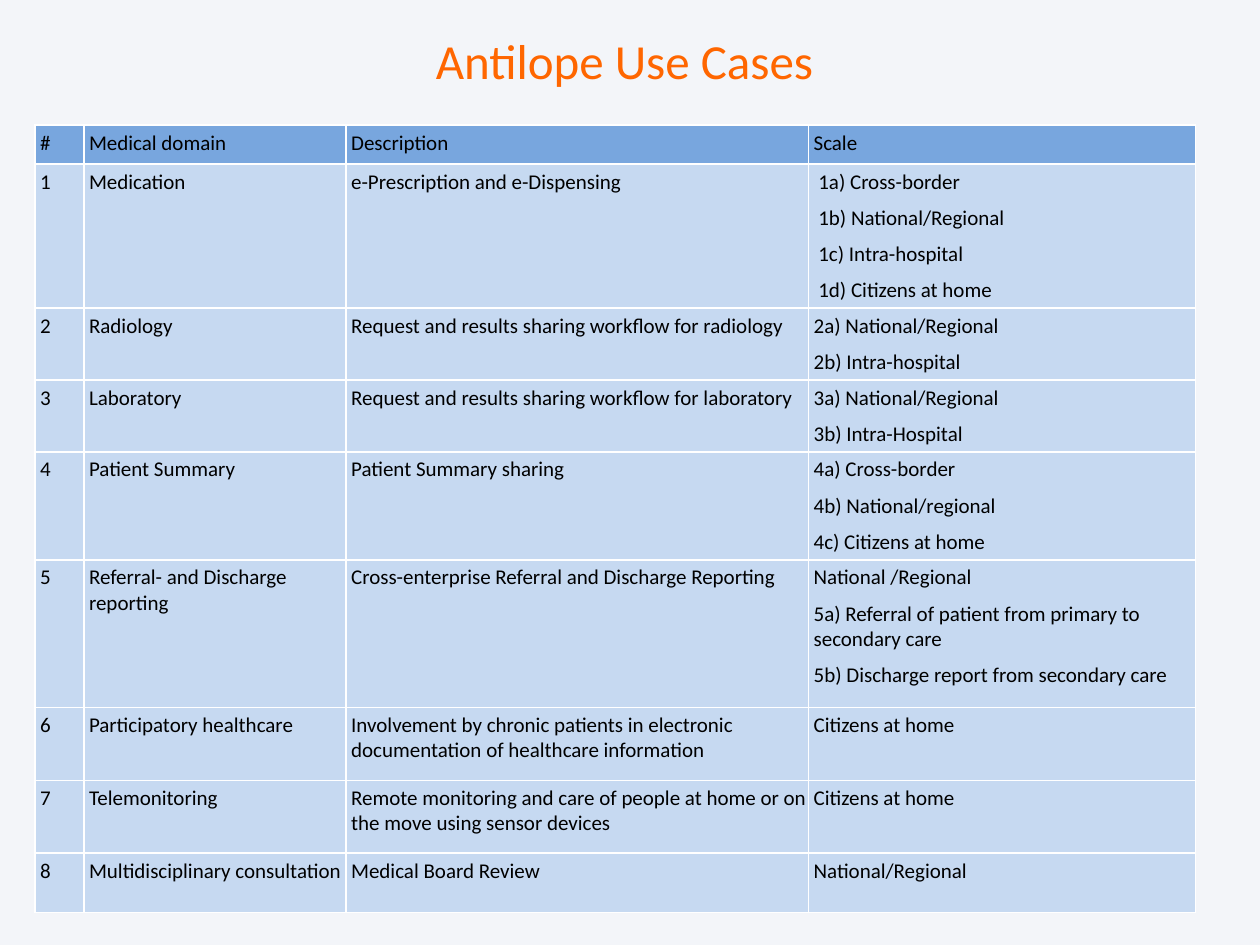
import pptx
import pptx.dml.color
import pptx.enum.text
import pptx.oxml
import pptx.oxml.ns
import pptx.util
from pptx.util import Pt

RGBColor = pptx.dml.color.RGBColor
BACKGROUND = RGBColor(0xF3, 0xF5, 0xF9)
ORANGE = RGBColor(0xFF, 0x66, 0x00)
BLACK = RGBColor(0x00, 0x00, 0x00)
WHITE = RGBColor(0xFF, 0xFF, 0xFF)
HEADER_BLUE = RGBColor(0x78, 0xA6, 0xDE)
BODY_BLUE = RGBColor(0xC6, 0xD9, 0xF1)
FONT = "Calibri"

COLUMN_WIDTHS = (28, 149.8, 264.3, 221)
ROW_HEIGHTS = (22.3, 77.8, 35.3, 37.4, 56.9, 84.2, 41.7, 41.7, 33.8)
USE_CASES = (
    ("#", "Medical domain", "Description", "Scale"),
    ("1", "Medication", "e-Prescription and e-Dispensing",
     "1a) Cross-border\n1b) National/Regional\n1c) Intra-hospital\n1d) Citizens at home"),
    ("2", "Radiology", "Request and results sharing workflow for radiology",
     "2a) National/Regional\n2b) Intra-hospital"),
    ("3", "Laboratory", "Request and results sharing workflow for laboratory",
     "3a) National/Regional\n3b) Intra-Hospital"),
    ("4", "Patient Summary", "Patient Summary sharing",
     "4a) Cross-border\n4b) National/regional\n4c) Citizens at home"),
    ("5", "Referral- and Discharge reporting",
     "Cross-enterprise Referral and Discharge Reporting",
     "National /Regional\n5a) Referral of patient from primary to secondary care\n"
     "5b) Discharge report from secondary care"),
    ("6", "Participatory healthcare",
     "Involvement by chronic patients in electronic documentation of healthcare information",
     "Citizens at home"),
    ("7", "Telemonitoring",
     "Remote monitoring and care of people at home or on the move using sensor devices",
     "Citizens at home"),
    ("8", "Multidisciplinary consultation", "Medical Board Review", "National/Regional"),
)


def write_text(text_frame, text, size, color, alignment=pptx.enum.text.PP_ALIGN.LEFT, gap=0):
    """Write one paragraph per line of text, with a gap between paragraphs."""
    text_frame.text = text
    for index, paragraph in enumerate(text_frame.paragraphs):
        paragraph.alignment = alignment
        paragraph.space_before = Pt(gap if index else 0)
        paragraph.font.name = FONT
        paragraph.font.size = Pt(size)
        paragraph.font.bold = False
        paragraph.font.color.rgb = color


def add_borders(cell, color, width):
    """Draw a solid line on all four sides of a cell."""
    properties = cell._tc.get_or_add_tcPr()
    for side in ("lnL", "lnR", "lnT", "lnB"):
        properties.append(pptx.oxml.parse_xml(
            f'<a:{side} {pptx.oxml.ns.nsdecls("a")} w="{Pt(width)}"><a:solidFill>'
            f'<a:srgbClr val="{color}"/></a:solidFill></a:{side}>'))


def place_title(slide, text, left, top, width, height):
    """Move the title placeholder into its box and format it."""
    title = slide.shapes.title
    title.left, title.top, title.width, title.height = map(Pt, (left, top, width, height))
    title.text_frame.vertical_anchor = pptx.enum.text.MSO_ANCHOR.TOP
    title.text_frame.auto_size = pptx.enum.text.MSO_AUTO_SIZE.NONE
    write_text(title.text_frame, text, 28, ORANGE, pptx.enum.text.PP_ALIGN.CENTER)


def add_use_case_table(slide, left, top):
    """Add the table of use cases with its top left corner at the given point."""
    frame = slide.shapes.add_table(
        len(ROW_HEIGHTS), len(COLUMN_WIDTHS), Pt(left), Pt(top),
        Pt(sum(COLUMN_WIDTHS)), Pt(sum(ROW_HEIGHTS)))
    table = frame.table
    table.horz_banding = False
    for column, width in zip(table.columns, COLUMN_WIDTHS):
        column.width = Pt(width)
    for row_index, (row, height, texts) in enumerate(zip(table.rows, ROW_HEIGHTS, USE_CASES)):
        row.height = Pt(height)
        for cell, text in zip(row.cells, texts):
            indented = text.startswith("1a)")
            cell.margin_left = Pt(5.6 if indented else 2.9)
            cell.margin_top = cell.margin_bottom = Pt(2.9)
            cell.margin_right = Pt(0.7)
            add_borders(cell, WHITE, 1)
            cell.fill.solid()
            cell.fill.fore_color.rgb = BODY_BLUE if row_index else HEADER_BLUE
            write_text(cell.text_frame, text, 12, BLACK, gap=6)


def main():
    """Build the slide and save it."""
    presentation = pptx.Presentation()
    presentation.slide_width, presentation.slide_height = Pt(720), Pt(540)
    slide = presentation.slides.add_slide(presentation.slide_layouts[5])
    slide.background.fill.solid()
    slide.background.fill.fore_color.rgb = BACKGROUND
    place_title(slide, "Antilope Use Cases", 148, 14, 417.6, 57)
    add_use_case_table(slide, 20, 71.5)
    presentation.save("out.pptx")


if __name__ == "__main__":
    main()
